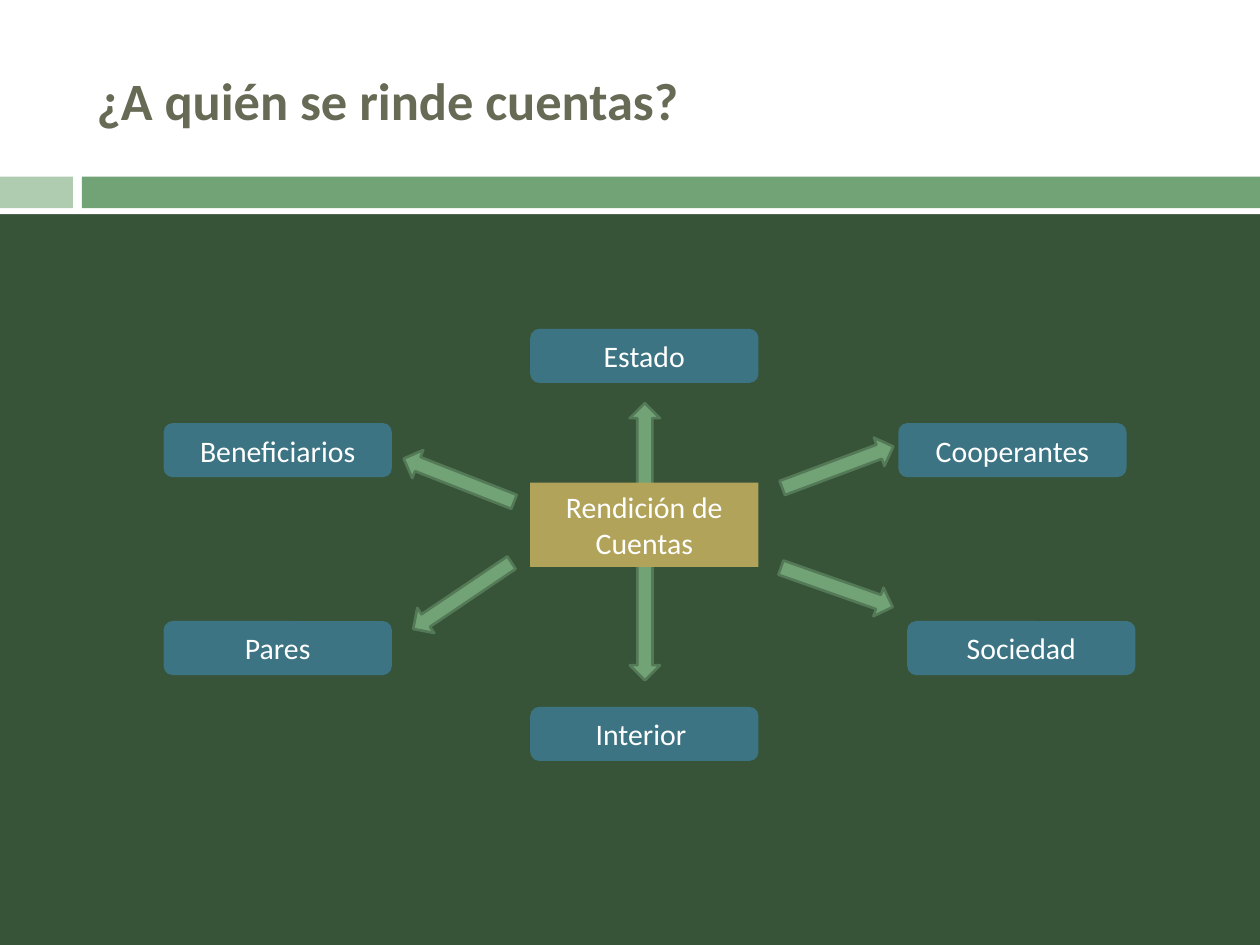
from pptx import Presentation
from pptx.dml.color import RGBColor
from pptx.enum import shapes, text
from pptx.util import Cm, Pt

FONT = "Calibri"
WHITE = RGBColor(0xFF, 0xFF, 0xFF)
DARK_GREEN = RGBColor(0x37, 0x54, 0x39)
GREEN = RGBColor(0x72, 0xA3, 0x76)
PALE_GREEN = RGBColor(0xB0, 0xCC, 0xB0)
ARROW_EDGE = RGBColor(0x54, 0x79, 0x57)
GOLD = RGBColor(0xB1, 0xA3, 0x5A)
BLUE = RGBColor(0x3C, 0x74, 0x83)
OLIVE = RGBColor(0x67, 0x6A, 0x55)

SHAPE = shapes.MSO_SHAPE
SLIDE_W, SLIDE_H = 25.4, 19.05
BOX_W, BOX_H = 4.6, 1.09
ARROW_W, ARROW_H = 2.39, 0.61
LEFT_X, MIDDLE_X = 3.3, 10.69
UPPER_Y, LOWER_Y = 8.53, 12.52

# Label, left, top
AUDIENCES = [
    ("Interior ", MIDDLE_X, 14.25),
    ("Cooperantes", 18.11, UPPER_Y),
    ("Estado", MIDDLE_X, 6.63),
    ("Sociedad", 18.29, LOWER_Y),
    ("Pares", LEFT_X, LOWER_Y),
    ("Beneficiarios", LEFT_X, UPPER_Y),
]
# Centre x, centre y, rotation
ARROWS = [
    (13, 9.32, 270),
    (13, 12.52, 90),
    (16.89, 9.42, 339.5),
    (16.87, 11.84, 19.4),
    (9.32, 12.01, 146),
    (9.25, 9.68, 201.4),
]


def add_filled(slide, kind, x, y, w, h, color):
    sp = slide.shapes.add_shape(kind, Cm(x), Cm(y), Cm(w), Cm(h))
    sp.shadow.inherit = False
    sp.fill.solid()
    sp.fill.fore_color.rgb = color
    sp.line.fill.background()
    return sp


def write(sp, label, size, color, align, bold=False):
    tf = sp.text_frame
    tf.word_wrap = True
    tf.vertical_anchor = text.MSO_ANCHOR.MIDDLE
    tf.text = label
    p = tf.paragraphs[0]
    p.alignment = align
    font = p.runs[0].font
    font.name, font.size, font.bold = FONT, Pt(size), bold
    font.color.rgb = color


def add_box(slide, kind, label, x, y, h, color):
    sp = add_filled(slide, kind, x, y, BOX_W, h, color)
    write(sp, label, 17, WHITE, text.PP_ALIGN.CENTER)


def add_arrow(slide, center_x, center_y, rotation):
    sp = add_filled(slide, SHAPE.RIGHT_ARROW, center_x - ARROW_W / 2,
                    center_y - ARROW_H / 2, ARROW_W, ARROW_H, GREEN)
    sp.rotation = rotation
    sp.line.color.rgb = ARROW_EDGE
    sp.line.width = Pt(1.5)


def add_header(slide):
    for x, y, w, h, color in [
        (0, 0, SLIDE_W, 4.32, WHITE),
        (0, 3.56, 1.47, 0.64, PALE_GREEN),
        (1.65, 3.56, SLIDE_W - 1.65, 0.64, GREEN),
    ]:
        add_filled(slide, SHAPE.RECTANGLE, x, y, w, h, color)
    title = slide.shapes.add_textbox(Cm(1.7), Cm(0.64), Cm(22.66), Cm(2.74))
    write(title, "¿A quién se rinde cuentas?", 30, OLIVE,
          text.PP_ALIGN.LEFT, bold=True)


def main():
    prs = Presentation()
    prs.slide_width, prs.slide_height = Cm(SLIDE_W), Cm(SLIDE_H)
    slide = prs.slides.add_slide(prs.slide_layouts[6])
    slide.background.fill.solid()
    slide.background.fill.fore_color.rgb = DARK_GREEN

    add_header(slide)
    for arrow in ARROWS:
        add_arrow(slide, *arrow)
    add_box(slide, SHAPE.RECTANGLE, "Rendición de Cuentas",
            MIDDLE_X, 9.73, 1.7, GOLD)
    for label, x, y in AUDIENCES:
        add_box(slide, SHAPE.ROUNDED_RECTANGLE, label, x, y, BOX_H, BLUE)

    prs.save("out.pptx")


if __name__ == "__main__":
    main()
